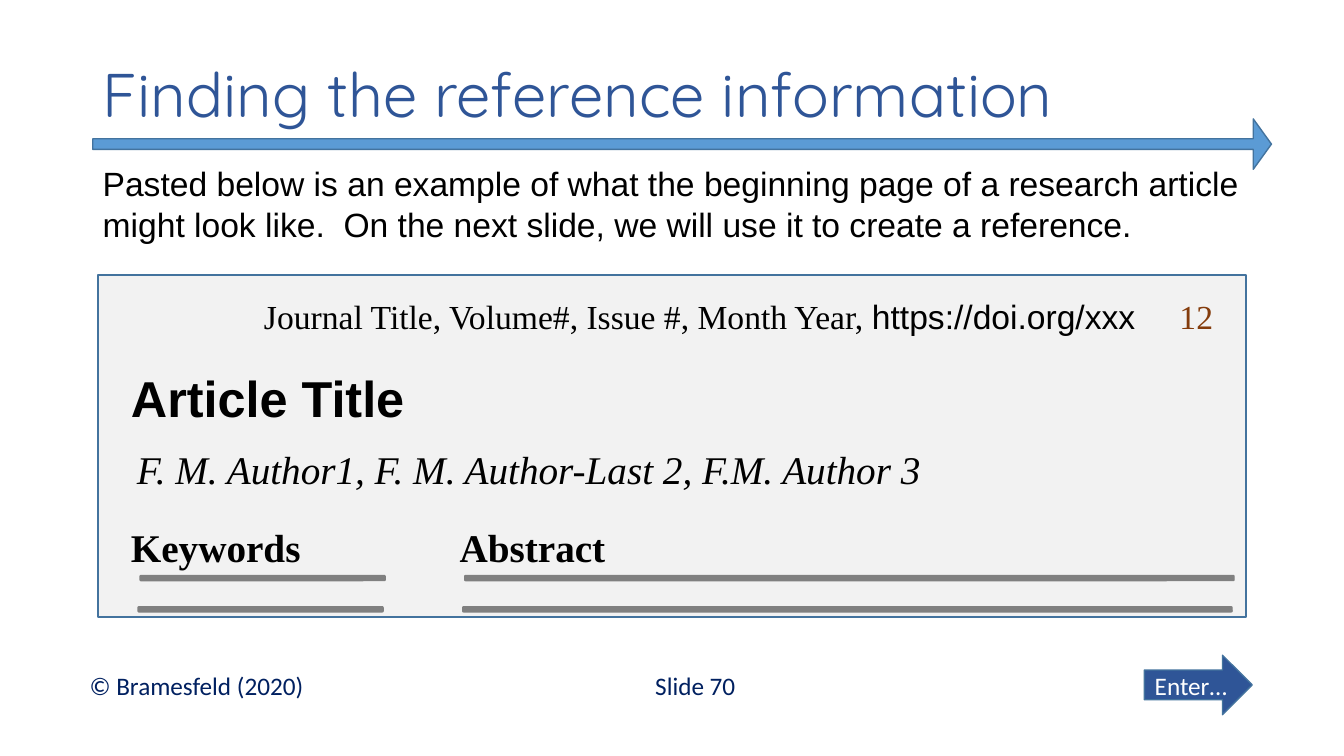
"""Build the slide that shows where reference information sits on an article's first page."""
import pptx
import pptx.util
import pptx.dml.color
import pptx.enum.shapes
import pptx.enum.text

Inches = pptx.util.Inches
RGBColor = pptx.dml.color.RGBColor
Shape = pptx.enum.shapes.MSO_SHAPE
Anchor = pptx.enum.text.MSO_ANCHOR
Align = pptx.enum.text.PP_ALIGN

BLACK = RGBColor(0x00, 0x00, 0x00)
WHITE = RGBColor(0xFF, 0xFF, 0xFF)
NAVY = RGBColor(0x00, 0x20, 0x60)
BLUE = RGBColor(0x2F, 0x55, 0x97)
SKY = RGBColor(0x5B, 0x9B, 0xD5)
OUTLINE = RGBColor(0x43, 0x73, 0x9E)
PAPER = RGBColor(0xF2, 0xF2, 0xF2)
GRAY = RGBColor(0x80, 0x80, 0x80)
BROWN = RGBColor(0x84, 0x3C, 0x0C)
SERIF = "Times New Roman"

TITLE = ("Finding the reference information", "Quicksand", 44, BLUE, "")
ENTER = ("Enter…", "Calibri", 18, WHITE, "")
INTRO = ("Pasted below is an example of what the beginning page of a research article "
         "might look like.  On the next slide, we will use it to create a reference.")
JOURNAL = "Journal Title, Volume#, Issue #, Month Year, "
AUTHORS = "F. M. Author1, F. M. Author-Last 2, F.M. Author 3"

TEXTS = [
    ((6.4, 6.6, 1.05, 0.4), False, [("Slide 70", "Calibri", 18, NAVY, "")]),
    ((0.79, 6.6, 2.71, 0.4), True, [("© Bramesfeld (2020)", "Calibri", 18, NAVY, "")]),
    ((2.52, 2.89, 8.87, 0.5), True, [(JOURNAL, SERIF, 24, BLACK, ""),
                                     ("https://doi.org/xxx", "Arial", 24, BLACK, "")]),
    ((1.26, 4.37, 8.06, 0.57), False, [(AUTHORS, SERIF, 28, BLACK, "italic")]),
    ((1.2, 3.59, 2.94, 0.71), False, [("Article Title", "Arial", 36, BLACK, "bold")]),
    ((4.46, 5.14, 1.66, 0.57), False, [("Abstract", SERIF, 28, BLACK, "bold")]),
    ((1.2, 5.14, 1.9, 0.57), False, [("Keywords", SERIF, 28, BLACK, "bold")]),
    ((11.6, 2.89, 0.56, 0.5), True, [("12", SERIF, 24, BROWN, "")]),
    ((0.92, 1.57, 11.5, 0.91), True, [(INTRO, "Arial", 24, BLACK, "")]),
]
RULE_COLUMNS = [(1.39, 2.43), (4.61, 7.63)]
RULE_ROWS = [(0, 5.71), (-0.02, 6.02)]


def add_runs(paragraph, runs):
    """Append formatted runs to a paragraph."""
    for text, font_name, size, color, style in runs:
        run = paragraph.add_run()
        run.text = text
        run.font.name = font_name
        run.font.size = pptx.util.Pt(size)
        run.font.color.rgb = color
        run.font.bold = style == "bold"
        run.font.italic = style == "italic"


def add_box(slide, kind, place, fill, line):
    """Add a flat filled shape with a thin outline."""
    shape = slide.shapes.add_shape(kind, *map(Inches, place))
    shape.shadow.inherit = False
    shape.fill.solid()
    shape.fill.fore_color.rgb = fill
    shape.line.color.rgb = line
    shape.line.width = pptx.util.Pt(1)
    return shape


def add_title(slide):
    """Place and format the slide title."""
    title = slide.shapes.title
    title.left, title.top, title.width, title.height = map(Inches, (0.92, 0.4, 11.5, 1.14))
    title.text_frame.vertical_anchor = Anchor.MIDDLE
    paragraph = title.text_frame.paragraphs[0]
    paragraph.alignment = Align.LEFT
    paragraph.line_spacing = 0.9
    add_runs(paragraph, [TITLE])


def main():
    """Build and save the slide."""
    presentation = pptx.Presentation()
    presentation.slide_width = Inches(13.33)
    presentation.slide_height = Inches(7.5)
    slide = presentation.slides.add_slide(presentation.slide_layouts[5])
    add_title(slide)

    enter_arrow = add_box(slide, Shape.RIGHT_ARROW, (11.35, 6.5, 1.07, 0.59), BLUE, OUTLINE)
    enter_arrow.text_frame.word_wrap = False
    enter_arrow.text_frame.vertical_anchor = Anchor.MIDDLE
    enter_arrow.text_frame.paragraphs[0].alignment = Align.CENTER
    add_runs(enter_arrow.text_frame.paragraphs[0], [ENTER])

    title_arrow = add_box(slide, Shape.RIGHT_ARROW, (0.92, 1.18, 11.69, 0.5), SKY, OUTLINE)
    title_arrow.adjustments[0] = 0.21
    title_arrow.adjustments[1] = 0.36

    add_box(slide, Shape.RECTANGLE, (0.97, 2.73, 11.39, 3.39), PAPER, OUTLINE)
    for left, width in RULE_COLUMNS:
        for shift, top in RULE_ROWS:
            add_box(slide, Shape.ROUNDED_RECTANGLE, (left + shift, top, width, 0.05), GRAY, GRAY)

    for place, wrap, runs in TEXTS:
        text_box = slide.shapes.add_textbox(*map(Inches, place))
        text_box.text_frame.word_wrap = wrap
        add_runs(text_box.text_frame.paragraphs[0], runs)

    presentation.save("out.pptx")


if __name__ == "__main__":
    main()
